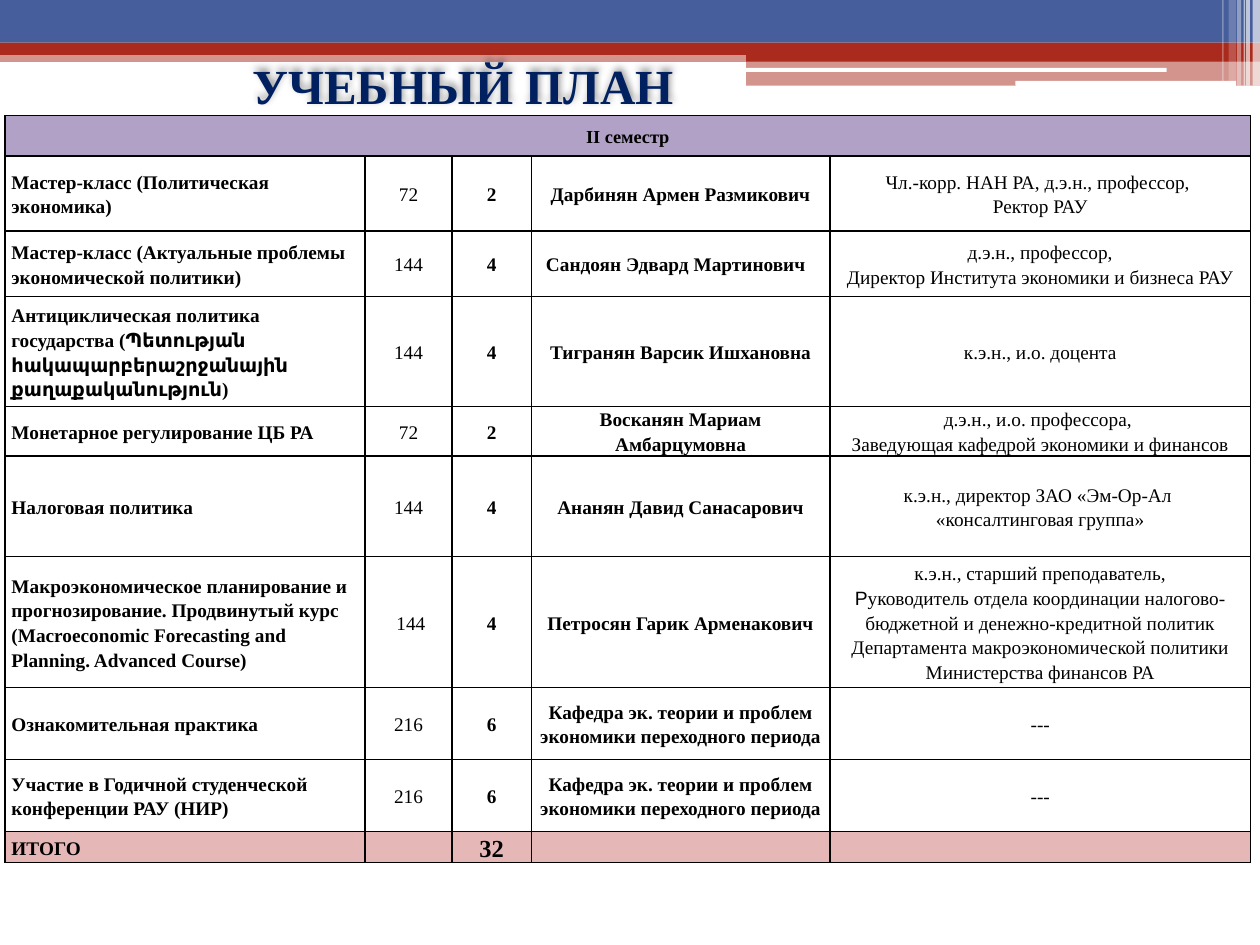
from itertools import cycle

from lxml.etree import SubElement
from pptx import Presentation
from pptx.dml.color import RGBColor
from pptx.enum.shapes import MSO_SHAPE as Shape
from pptx.enum.text import MSO_ANCHOR as Anchor, PP_ALIGN as Align
from pptx.oxml.ns import qn
from pptx.util import Cm, Pt

COLORS = {"blue": "465E9C", "red": "AA2B1E", "white": "FFFFFF", "black": "000000",
          "navy": "002060", "semester": "B2A1C7", "total": "E5B8B7"}
SERIF, SANS = "Times New Roman", "Arial"

# left, top, width, height (cm), colour, opacity %
BANDS = [
    (0, 1.02, 25.4, 0.23, "red", 50),
    (0, 0, 25.4, 0.86, "blue", 100),
    (0, 0.86, 25.4, 0.25, "red", 100),
    (15.04, 0.99, 10.36, 0.25, "red", 100),
    (15.04, 1.22, 10.36, 0.51, "red", 50),
]
SLITS = [(15.01, 1.37, 8.51, 0.08, "white", 100), (20.47, 1.63, 4.45, 0.1, "white", 100)]
# left, width, height (cm), opacity %
GLINTS = [(25.25, 0.15, 1.73, 65), (25.12, 0.08, 1.73, 65), (25.07, 0.03, 1.73, 60),
          (24.94, 0.08, 1.73, 40), (24.77, 0.15, 1.64, 20), (24.64, 0.03, 1.64, 30)]

COLUMN_WIDTHS = [7.26, 1.75, 1.6, 6.02, 8.48]
ROW_HEIGHTS = [0.81, 1.52, 1.32, 2.21, 1, 2.03, 2.64, 1.45, 1.45, 0.61]
DEPARTMENT = "Кафедра эк. теории и проблем экономики переходного периода"
# "|" switches between the serif and the sans font
COURSES = [
    ("Мастер-класс (Политическая экономика)", "72", "2", "Дарбинян Армен Размикович",
     "Чл.-корр. НАН РА, д.э.н., профессор, \nРектор РАУ"),
    ("Мастер-класс (Актуальные проблемы экономической политики)", "144", "4",
     "Сандоян Эдвард Мартинович  ",
     "д.э.н., профессор,\nДиректор Института экономики и бизнеса РАУ"),
    ("Антициклическая политика государства "
     "(|Պետության հակապարբերաշրջանային քաղաքականություն|)", "144", "4",
     "Тигранян Варсик Ишхановна", "к.э.н., и.о. доцента"),
    ("Монетарное регулирование ЦБ РА", "72", "2", "Восканян Мариам Амбарцумовна",
     "д.э.н., и.о. профессора, \nЗаведующая кафедрой экономики и финансов"),
    ("Налоговая политика", "144", "4", "Ананян Давид Санасарович",
     "к.э.н., директор ЗАО «Эм-Ор-Ал \n«консалтинговая группа»"),
    ("Макроэкономическое планирование и прогнозирование. Продвинутый курс\n"
     "(Macroeconomic Forecasting and Planning. Advanced Course)", " 144", "4",
     "Петросян Гарик Арменакович",
     "к.э.н., старший преподаватель,\n|Р|уководитель отдела координации "
     "налогово-бюджетной и денежно-кредитной политик Департамента "
     "макроэкономической политики Министерства финансов РА"),
    ("Ознакомительная практика", "216", "6", DEPARTMENT, "---"),
    ("Участие в Годичной студенческой конференции РАУ (НИР)", "216", "6", DEPARTMENT, "---"),
]
TOTAL = ("ИТОГО", "", "32", "", "")
REGULAR_COLUMNS = (1, 4)


def set_all(target, values):
    for name, value in values.items():
        setattr(target, name, value)


def set_font(font, name, size, color, bold):
    set_all(font, {"name": name, "size": Pt(size), "bold": bold})
    font.color.rgb = RGBColor.from_string(COLORS[color])


def add_band(slide, kind, left, top, width, height, color, opacity):
    band = slide.shapes.add_shape(kind, Cm(left), Cm(top), Cm(width), Cm(height))
    band.shadow.inherit = False
    band.line.fill.background()
    band.fill.solid()
    band.fill.fore_color.rgb = RGBColor.from_string(COLORS[color])
    if opacity < 100:
        tint = band.fill._xPr.find(".//" + qn("a:srgbClr"))
        SubElement(tint, qn("a:alpha"), val=str(opacity * 1000))


def add_header(slide, left, top):
    for kind, strips in ((Shape.RECTANGLE, BANDS), (Shape.ROUNDED_RECTANGLE, SLITS)):
        for x, y, *rest in strips:
            add_band(slide, kind, left + x, top + y, *rest)
    for x, width, height, opacity in GLINTS:
        add_band(slide, Shape.RECTANGLE, left + x, top, width, height, "white", opacity)


def add_title(slide, left, top, width, height):
    title = slide.shapes.title
    set_all(title, {"left": Cm(left), "top": Cm(top), "width": Cm(width), "height": Cm(height)})
    frame = title.text_frame
    set_all(frame, {"text": "УЧЕБНЫЙ ПЛАН", "vertical_anchor": Anchor.MIDDLE, "word_wrap": True})
    frame.paragraphs[0].alignment = Align.CENTER
    set_font(frame.paragraphs[0].runs[0].font, SERIF, 28, "navy", True)
    effects = SubElement(title._element.spPr, qn("a:effectLst"))
    shadow = SubElement(effects, qn("a:outerShdw"), blurRad="50800", dist="38100",
                        dir="16200000", rotWithShape="0")
    tint = SubElement(shadow, qn("a:srgbClr"), val=COLORS["black"])
    SubElement(tint, qn("a:alpha"), val="40000")
    slide.shapes._spTree.append(title._element)  # in front of the header


def add_borders(cell):
    properties = cell._tc.get_or_add_tcPr()
    for position, side in enumerate(("a:lnL", "a:lnR", "a:lnT", "a:lnB")):
        border = SubElement(properties, qn(side), w=str(Pt(1)))
        properties.insert(position, border)
        fill = SubElement(border, qn("a:solidFill"))
        SubElement(fill, qn("a:srgbClr"), val=COLORS["black"])


def fill_cell(cell, text, align, size=11, bold=True, color=None):
    set_all(cell, {"margin_left": Cm(0.13), "margin_right": Cm(0.13), "margin_top": 0,
                   "margin_bottom": 0, "vertical_anchor": Anchor.MIDDLE})
    if color:
        cell.fill.solid()
        cell.fill.fore_color.rgb = RGBColor.from_string(COLORS[color])
    else:
        cell.fill.background()
    add_borders(cell)
    frame = cell.text_frame
    for index, line in enumerate(text.split("\n")):
        paragraph = frame.add_paragraph() if index else frame.paragraphs[0]
        set_all(paragraph, {"alignment": align, "line_spacing": 1.15})
        for part, name in zip(line.split("|"), cycle((SERIF, SANS))):
            if part:
                run = paragraph.add_run()
                run.text = part
                set_font(run.font, name, size, "black", bold)
        if not line:
            SubElement(paragraph._p, qn("a:endParaRPr"), sz=str(size * 100))


def add_curriculum(slide, left, top):
    table = slide.shapes.add_table(
        len(ROW_HEIGHTS), len(COLUMN_WIDTHS), Cm(left), Cm(top),
        Cm(sum(COLUMN_WIDTHS)), Cm(sum(ROW_HEIGHTS))).table
    set_all(table, {"first_row": False, "horz_banding": False})
    for column, width in zip(table.columns, COLUMN_WIDTHS):
        column.width = Cm(width)
    for row, height in zip(table.rows, ROW_HEIGHTS):
        row.height = Cm(height)

    table.cell(0, 0).merge(table.cell(0, len(COLUMN_WIDTHS) - 1))
    for c in range(len(COLUMN_WIDTHS)):
        fill_cell(table.cell(0, c), "" if c else "II семестр", Align.CENTER, 10.5 if not c else 10,
                  color="semester")
    for r, values in enumerate([*COURSES, TOTAL], 1):
        is_total = values is TOTAL
        for c, text in enumerate(values):
            fill_cell(table.cell(r, c), text, Align.CENTER if c else Align.LEFT,
                      size=14 if is_total and c == 2 else 11,
                      bold=c not in REGULAR_COLUMNS,
                      color="total" if is_total else None)


def main():
    deck = Presentation()
    set_all(deck, {"slide_width": Cm(25.4), "slide_height": Cm(19.05)})
    slide = deck.slides.add_slide(deck.slide_layouts[5])
    add_header(slide, 0, 0)
    add_title(slide, -0.71, 0.74, 20.09, 1.96)
    add_curriculum(slide, 0.1, 2.33)
    deck.save("out.pptx")


if __name__ == "__main__":
    main()
